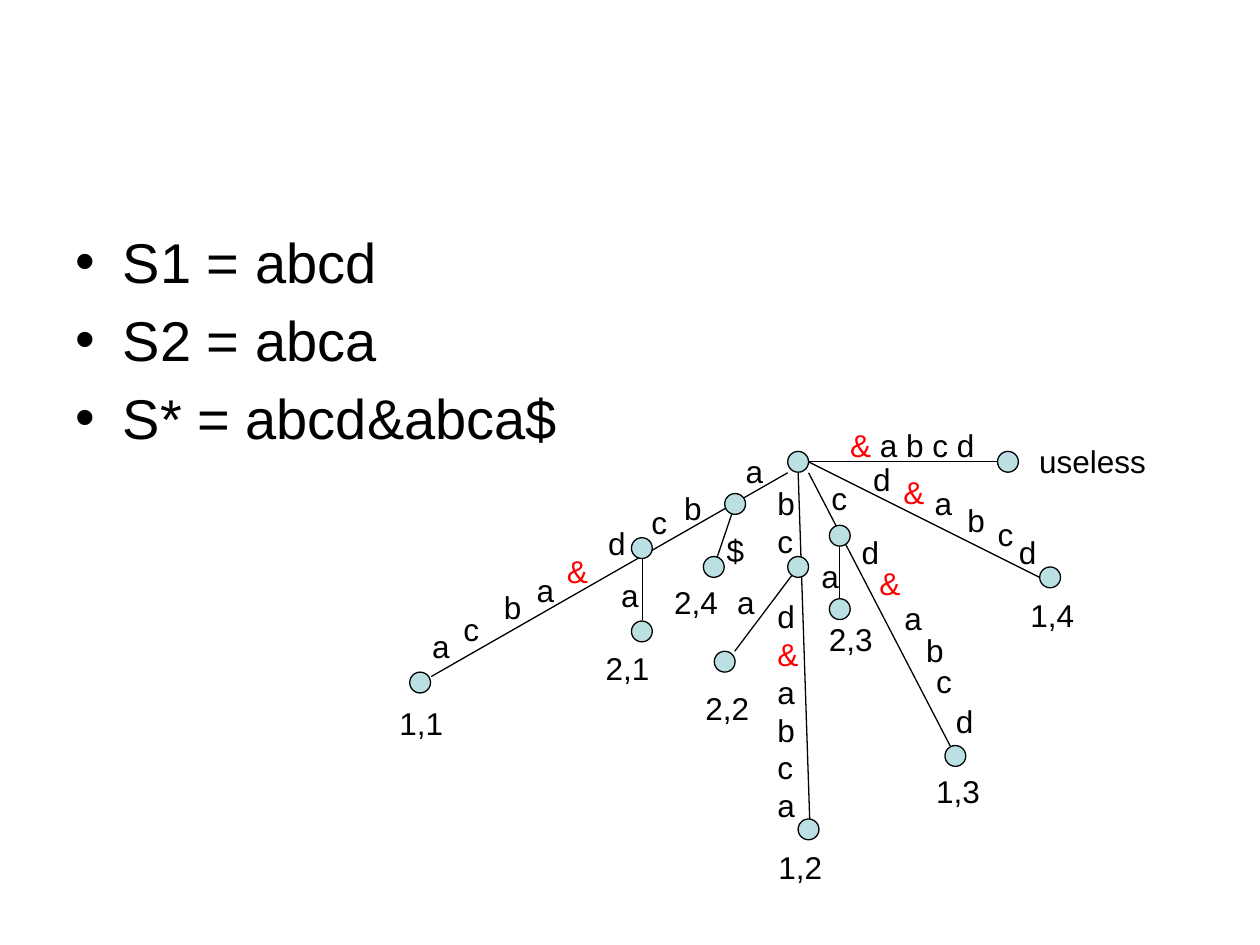
import pptx
import pptx.dml.color
import pptx.enum.shapes
import pptx.enum.text
import pptx.oxml.ns
import pptx.util
from lxml import etree

Cm, Pt = pptx.util.Cm, pptx.util.Pt
COLOURS = {"ink": "000000", "separator": "FF0000", "node": "BBE0E3"}
FONT = "Arial"
NODE_SIZE = 0.42
LINE_HEIGHT = 0.76
PADDING = 0.25
LETTER_WIDTHS = {"c": 0.84, "&": 0.94}

STRINGS = ["S1 = abcd", "S2 = abca", "S* = abcd&abca$"]

NODES = [
    (16.09, 9.31), (12.94, 11.05), (16.09, 11.43), (16.93, 10.8),
    (14.82, 10.16), (16.3, 16.72), (19.26, 15.24), (14.39, 11.43),
    (16.93, 12.28), (14.61, 13.34), (12.94, 12.73), (8.47, 13.76),
    (21.17, 11.64), (20.32, 9.31),
]

EDGES = [
    (14.39, 11.43, 14.82, 10.16),
    (15.88, 9.53, 8.69, 13.64),
    (16.09, 9.53, 16.33, 16.71),
    (16.3, 9.53, 19.26, 15.24),
    (16.3, 9.31, 20.96, 11.64),
    (16.3, 9.31, 20.32, 9.31),
    (12.95, 11.23, 12.95, 12.5),
    (16.09, 11.43, 14.81, 13.13),
    (16.93, 11, 16.93, 12.27),
]

EDGE_LETTERS = [
    ("abcd&abca", [(14.78, 8.99), (13.54, 9.73), (12.88, 10.01),
                   (12.01, 10.44), (11.18, 11), (10.57, 11.38),
                   (9.91, 11.73), (9.09, 12.17), (8.46, 12.52)]),
    ("cd&abcd", [(16.51, 9.53), (17.12, 10.62), (17.48, 11.25),
                 (17.98, 11.96), (18.42, 12.6), (18.62, 13.23),
                 (19.02, 14.02)]),
    ("d&abcd", [(17.35, 9.14), (17.96, 9.42), (18.59, 9.63),
                (19.25, 9.98), (19.86, 10.26), (20.29, 10.62)]),
    ("aaa$", [(12.27, 11.48), (14.61, 11.63), (16.31, 11.1),
              (14.4, 10.59)]),
]

LEAF_LABELS = [
    ("1,1", 7.8, 14.07), ("2,1", 11.96, 12.95), ("1,2", 15.44, 16.97),
    ("1,3", 18.62, 15.44), ("1,4", 20.52, 11.89), ("2,2", 13.97, 13.77),
    ("2,3", 16.46, 12.37), ("2,4", 13.34, 11.63),
]

USELESS_SUFFIX = ("& a b c d", 16.89, 8.46, 3.02)
USELESS_LABEL = ("useless", 20.7, 8.79, 2.67)
BC_EDGE = ("bc", "d&abca", 15.42, 9.63, 0.94)


def rgb(name):
    return pptx.dml.color.RGBColor.from_string(COLOURS[name])


def style(font, size, colour="ink"):
    font.name = FONT
    font.size = Pt(size)
    font.color.rgb = rgb(colour)


def add_label(shapes, lines, left, top, width, gap_before=None):
    rows = len(lines) + (gap_before is not None)
    label = shapes.add_textbox(Cm(left), Cm(top), Cm(width),
                               Cm(rows * LINE_HEIGHT + PADDING))
    frame = label.text_frame
    frame.word_wrap = False
    frame.auto_size = pptx.enum.text.MSO_AUTO_SIZE.SHAPE_TO_FIT_TEXT
    for index, line in enumerate(lines):
        paragraph = frame.add_paragraph() if index else frame.paragraphs[0]
        style(paragraph.font, 18)
        if index == gap_before:
            paragraph.space_before = Cm(LINE_HEIGHT)
        before, separator, after = line.partition("&")
        for part in filter(None, (before, separator, after)):
            run = paragraph.add_run()
            run.text = part
            if part == "&":
                run.font.color.rgb = rgb("separator")


def add_edge(shapes, ends):
    edge = shapes.add_connector(pptx.enum.shapes.MSO_CONNECTOR.STRAIGHT,
                                *map(Cm, ends))
    edge.line.color.rgb = rgb("ink")
    edge.line.width = Pt(0.75)
    etree.SubElement(edge._element.spPr, pptx.oxml.ns.qn("a:effectLst"))


def add_node(shapes, x, y):
    node = shapes.add_shape(pptx.enum.shapes.MSO_SHAPE.OVAL,
                            Cm(x - NODE_SIZE / 2), Cm(y - NODE_SIZE / 2),
                            Cm(NODE_SIZE), Cm(NODE_SIZE))
    node.shadow.inherit = False
    node.fill.solid()
    node.fill.fore_color.rgb = rgb("node")
    node.line.color.rgb = rgb("ink")
    node.line.width = Pt(0.75)


def main():
    deck = pptx.Presentation()
    deck.slide_width, deck.slide_height = Cm(25.4), Cm(19.05)
    slide = deck.slides.add_slide(deck.slide_layouts[1])
    shapes = slide.shapes
    unused_title = shapes.title.element
    unused_title.getparent().remove(unused_title)

    strings = slide.placeholders[1]
    strings.left, strings.top = Cm(1.27), Cm(4.45)
    strings.width, strings.height = Cm(22.86), Cm(12.57)
    strings.text_frame.text = "\n".join(STRINGS)
    for paragraph in strings.text_frame.paragraphs:
        style(paragraph.font, 32)

    for ends in EDGES:
        add_edge(shapes, ends)
    for x, y in NODES:
        add_node(shapes, x, y)
    for letters, places in EDGE_LETTERS:
        for letter, (left, top) in zip(letters, places):
            add_label(shapes, [letter], left, top,
                      LETTER_WIDTHS.get(letter, 0.86))
    for leaf, left, top in LEAF_LABELS:
        add_label(shapes, [leaf], left, top, 1.4)
    for text, left, top, width in (USELESS_SUFFIX, USELESS_LABEL):
        add_label(shapes, [text], left, top, width)
    shared, rest, left, top, width = BC_EDGE
    add_label(shapes, list(shared + rest), left, top, width, len(shared))

    deck.save("out.pptx")


if __name__ == "__main__":
    main()
